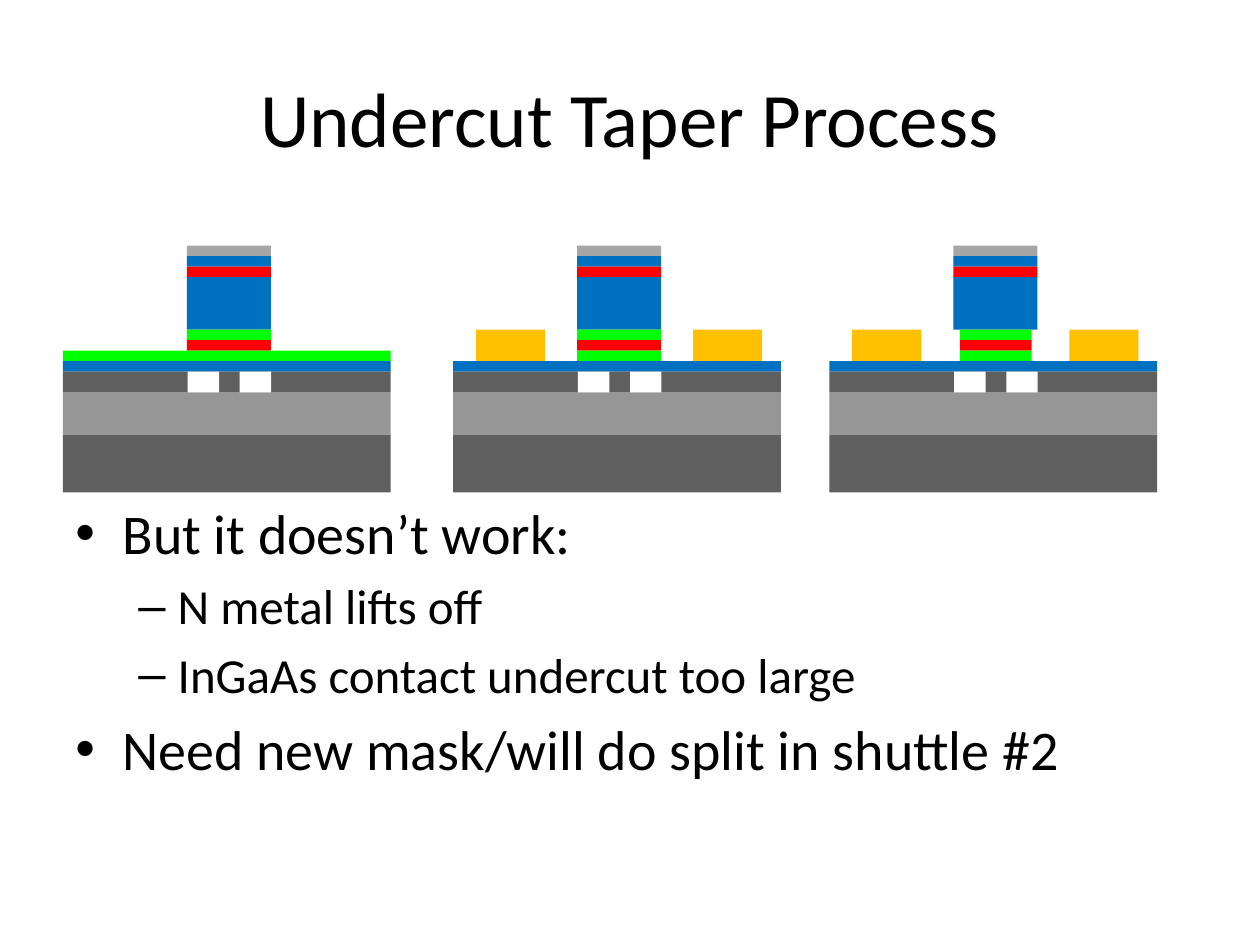
from lxml import etree
from pptx import Presentation
from pptx.dml.color import RGBColor
from pptx.enum import shapes, text
from pptx.oxml.ns import qn
from pptx.util import Pt

COLORS = {"silicon": "5F5F5F", "oxide": "969696", "trench": "FFFFFF",
          "blue": "0070C0", "red": "FF0000", "green": "00FF00",
          "cap": "A6A6A6", "metal": "FFC000", "text": "000000"}
FONT = "Calibri"
TITLE = "Undercut Taper Process"
BULLETS = [(0, "But it doesn’t work:"),
           (0 + 1, "N metal lifts off"),
           (1, "InGaAs contact undercut too large"),
           (0, "Need new mask/will do split in shuttle #2")]
# Per level: size, left margin, hanging indent, bullet
LEVELS = [(32, 27, 27, "•"), (28, 58.5, 22.5, "–")]

# Horizontal extents: offset from the left of the stack, width
SPANS = {"full": (0, 187.2), "mesa": (70.8, 48), "undercut": (74.5, 41)}
# Layers from top to bottom: colour, height, group
LAYERS = [("cap", 6, "mesa"), ("blue", 6, "mesa"), ("red", 6, "mesa"),
          ("blue", 30, "mesa"), ("green", 6, "contact"), ("red", 6, "contact"),
          ("green", 6, "base"), ("blue", 6, "full"), ("silicon", 12, "full"),
          ("oxide", 24, "full"), ("silicon", 33, "full")]
# Process steps: left edge, span of the contact, span of its base, metal pads
STEPS = [(36, "mesa", "full", False),
         (259, "mesa", "mesa", True),
         (474, "undercut", "undercut", True)]
STACK_TOP = 140.4
TRENCHES, TRENCH_WIDTH = (71.2, 101), 18
PADS, PAD_WIDTH, PAD_HEIGHT = (13, 137), 39.5, 18

prs = Presentation()
prs.slide_width, prs.slide_height = Pt(720), Pt(540)
s = prs.slides.add_slide(prs.slide_layouts[6])


def add_rect(color, x, y, w, h):
    sp = s.shapes.add_shape(shapes.MSO_SHAPE.RECTANGLE, Pt(x), Pt(y), Pt(w), Pt(h))
    sp.shadow.inherit = False
    sp.fill.solid()
    sp.fill.fore_color.rgb = RGBColor.from_string(COLORS[color])
    sp.line.fill.background()


def add_text_frame(x, y, w, h, anchor):
    tf = s.shapes.add_textbox(Pt(x), Pt(y), Pt(w), Pt(h)).text_frame
    tf.word_wrap = True
    tf.vertical_anchor = anchor
    return tf


def write(p, content, size):
    p.text = content
    font = p.runs[0].font
    font.name, font.size = FONT, Pt(size)
    font.color.rgb = RGBColor.from_string(COLORS["text"])


# Title
tf = add_text_frame(36, 21.6, 648, 90, text.MSO_ANCHOR.MIDDLE)
write(tf.paragraphs[0], TITLE, 44)
tf.paragraphs[0].alignment = text.PP_ALIGN.CENTER

# Cross-sections of the three process steps
for left, contact, base, has_pads in STEPS:
    spans = {**SPANS, "contact": SPANS[contact], "base": SPANS[base]}
    y = STACK_TOP
    for color, height, group in LAYERS:
        dx, width = spans[group]
        add_rect(color, left + dx, y, width, height)
        if group == "contact" and color == "green" and has_pads:
            for pad in PADS:
                add_rect("metal", left + pad, y, PAD_WIDTH, PAD_HEIGHT)
        if height == 12:
            for trench in TRENCHES:
                add_rect("trench", left + trench, y, TRENCH_WIDTH, height)
        y += height

# Bullets
tf = add_text_frame(36, 281.5, 648, 201, text.MSO_ANCHOR.TOP)
for i, (level, content) in enumerate(BULLETS):
    size, margin, hang, bullet = LEVELS[level]
    p = tf.add_paragraph() if i else tf.paragraphs[0]
    write(p, content, size)
    p.level = level
    p.space_before = Pt(size * 0.2)
    pPr = p._p.get_or_add_pPr()
    pPr.set("marL", str(Pt(margin)))
    pPr.set("indent", str(-Pt(hang)))
    etree.SubElement(pPr, qn("a:buFont")).set("typeface", "Arial")
    etree.SubElement(pPr, qn("a:buChar")).set("char", bullet)

prs.save("out.pptx")
